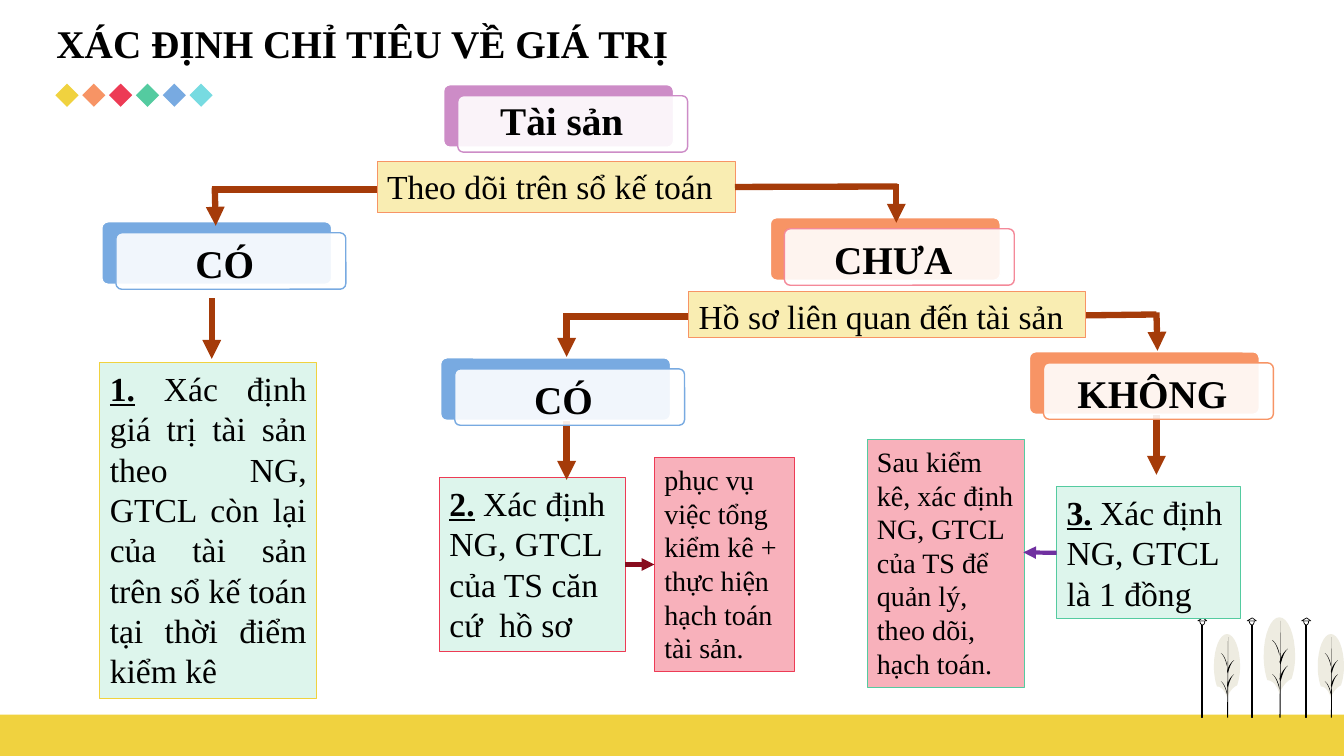
from lxml import etree
from pptx import Presentation
from pptx.dml.color import RGBColor
from pptx.enum.shapes import MSO_CONNECTOR as Connector, MSO_SHAPE as Shape
from pptx.enum.text import MSO_ANCHOR as Anchor, MSO_AUTO_SIZE as AutoSize, PP_ALIGN as Align
from pptx.oxml.ns import qn
from pptx.util import Inches, Pt

COLORS = {
    "yellow": "F0D23F", "orange": "F79465", "red": "ED3B55", "green": "54CBA0",
    "blue": "78AAE1", "cyan": "77DBE1", "purple": "CD8CC7", "pink": "F48999",
    "mint": "DDF5EC", "rose": "F8B1BB", "cream": "F9EDB2", "brown": "A53B09",
    "maroon": "880C1E", "violet": "7030A0", "leaf": "EEECE1",
    "black": "000000", "white": "FFFFFF",
}
FONT = "Times New Roman"
TITLE = "XÁC ĐỊNH CHỈ TIÊU VỀ GIÁ TRỊ"
DIAMONDS = ["yellow", "orange", "red", "green", "blue", "cyan"]

BOXES = {
    "records": ((4.36, 4.74, 1.84, 1.72), "mint", "red", 24, Align.LEFT,
                "2.", " Xác định NG, GTCL của TS căn cứ  hồ sơ"),
    "nominal": ((10.48, 4.83, 1.82, 1.31), "mint", "green", 24, Align.LEFT,
                "3.", " Xác định NG, GTCL là 1 đồng"),
    "purpose": ((6.49, 4.54, 1.39, 2.12), "rose", "red", 20, Align.LEFT,
                "", "phục vụ việc tổng kiểm kê + thực hiện hạch toán tài sản."),
    "afterwards": ((8.6, 4.36, 1.56, 2.46), "rose", "green", 20, Align.LEFT,
                   "", "Sau kiểm kê, xác định NG, GTCL của TS để quản lý, theo dõi, hạch toán."),
    "book_value": ((0.99, 3.6, 2.15, 3.33), "mint", "yellow", 24, Align.JUSTIFY,
                   "1.", " Xác định giá trị tài sản theo NG, GTCL còn lại của tài sản trên sổ kế "
                   "toán tại thời điểm kiểm kê"),
}
QUESTIONS = {
    "ledger": ((3.74, 1.6, 3.55, 0.51), "Theo dõi trên sổ kế toán"),
    "documents": ((6.83, 2.89, 3.94, 0.46), "Hồ sơ liên quan đến tài sản"),
}
CARDS = [
    ("Tài sản ", 4.4, 0.84, "purple", "purple", 0.11),
    ("CÓ", 1.01, 2.2, "blue", "blue", 0.17),
    ("CHƯA", 7.64, 2.16, "orange", "pink", 0.17),
    ("CÓ", 4.37, 3.55, "blue", "blue", 0.17),
    ("KHÔNG", 10.21, 3.49, "orange", "orange", 0.17),
]
BRANCH_LINES = [
    ((2.1, 1.88), (4.12, 1.88), False),
    ((2.1, 2.96), (2.1, 3.56), True),
    ((5.62, 3.11), (5.62, 3.54), True),
    ((5.62, 3.14), (7.65, 3.14), False),
    ((9.87, 3.14), (11.47, 3.12), False),
    ((11.47, 3.1), (11.48, 3.48), True),
    ((5.62, 4.16), (5.62, 4.76), True),
    ((11.47, 4.11), (11.47, 4.71), True),
]
CARD_ARROWS = [((2.13, 1.86), (2.14, 2.24), True), ((8.89, 1.83), (8.89, 2.21), True)]

GROUND = 7.12
TREES = [(13.2, 1), (12.69, 1.2), (12.17, 1)]
LAMPS = [12.96, 12.42, 11.93]
CROWN = [
    (0, -0.83),
    ((0.07, -0.83), (0.13, -0.69), (0.13, -0.51)),
    ((0.13, -0.44), (0.12, -0.38), (0.1, -0.32)),
    ((0.1, -0.32), (0.04, -0.3), (0, -0.2)),
    ((0, -0.2), (-0.03, -0.31), (-0.1, -0.31)),
    ((-0.12, -0.37), (-0.13, -0.44), (-0.13, -0.51)),
    ((-0.13, -0.69), (-0.07, -0.83), (0, -0.83)),
]
TRUNK = [(0.01, -0.8), (0.01, 0), (0, 0)]
LEFT_TWIG = [(-0.06, -0.36), ((-0.06, -0.36), (-0.02, -0.34), (0, -0.25)),
             (0, -0.23), ((0, -0.23), (-0.02, -0.33), (-0.06, -0.36))]
RIGHT_TWIG = [(0.07, -0.57), ((0.03, -0.54), (0.01, -0.44), (0.01, -0.44)),
              (0, -0.46), ((0.02, -0.54), (0.07, -0.57), (0.07, -0.57))]
TWIGS = [(LEFT_TWIG, 0), (LEFT_TWIG, -0.28), (RIGHT_TWIG, 0), (RIGHT_TWIG, 0.14)]
LAMP_PARTS = [
    [(-0.01, -0.97), (0, -0.97), (0, 0), (-0.01, 0)],
    [(0.02, -0.96), ((0.02, -0.94), (0.01, -0.92), (0, -0.92)),
     ((-0.02, -0.92), (-0.03, -0.94), (-0.03, -0.96))],
    [(0, -0.99), (0.04, -0.96), (-0.05, -0.96)],
]

presentation = Presentation()
presentation.slide_width, presentation.slide_height = Inches(13.33), Inches(7.5)
slide = presentation.slides.add_slide(presentation.slide_layouts[5])
shapes = slide.shapes


def color(name):
    return RGBColor.from_string(COLORS[name])


def paint(shape, fill, line=None, width=0.5):
    shape.shadow.inherit = False
    shape.fill.solid()
    shape.fill.fore_color.rgb = color(fill)
    if line:
        shape.line.color.rgb = color(line)
        shape.line.width = Pt(width)
    else:
        shape.line.fill.background()
    return shape


def add_box(kind, frame, fill, line=None, width=0.5):
    shape = shapes.add_shape(kind, *map(Inches, frame))
    if kind == Shape.ROUNDED_RECTANGLE:
        shape.adjustments[0] = 0.1
    return paint(shape, fill, line, width)


def write(shape, text, number="", size=24, bold=False, align=Align.LEFT, anchor=Anchor.TOP):
    frame = shape.text_frame
    frame.word_wrap = True
    frame.auto_size = AutoSize.NONE
    frame.vertical_anchor = anchor
    paragraph = frame.paragraphs[0]
    paragraph.alignment = align
    for content, marked in ((number, True), (text, False)):
        if content:
            run = paragraph.add_run()
            run.text = content
            run.font.name, run.font.size = FONT, Pt(size)
            run.font.bold, run.font.underline = bold or marked, marked
            run.font.color.rgb = color("black")
    return paragraph


def add_line(start, end, arrow=True, tint="brown", width=4.5):
    line = shapes.add_connector(Connector.STRAIGHT, *map(Inches, start + end))
    line.line.color.rgb = color(tint)
    line.line.width = Pt(width)
    if arrow:
        etree.SubElement(line.line._get_or_add_ln(), qn("a:tailEnd"), type="triangle")
    etree.SubElement(line._element.spPr, qn("a:effectLst"))
    return line


def flatten(outline, steps=8):
    points = [outline[0]]
    for part in outline[1:]:
        if len(part) == 2:
            points.append(part)
            continue
        curve = [points[-1], *part]
        for step in range(1, steps + 1):
            t = step / steps
            weights = ((1 - t) ** 3, 3 * t * (1 - t) ** 2, 3 * t * t * (1 - t), t ** 3)
            points.append(tuple(sum(w * p[axis] for w, p in zip(weights, curve)) for axis in (0, 1)))
    return points


def add_outline(outline, x, fill, scale=1, drop=0, line=None):
    points = [(Inches(x + scale * px), Inches(GROUND + scale * (py + drop)))
              for px, py in flatten(outline)]
    builder = shapes.build_freeform(*points[0])
    builder.add_line_segments(points[1:], close=True)
    paint(builder.convert_to_shape(), fill, line)


add_box(Shape.RECTANGLE, (0, 7.09, 13.33, 0.41), "yellow")
for x, scale in TREES:
    add_outline(CROWN, x, "leaf", scale)
    add_outline(TRUNK, x, "black", scale)
    for twig, drop in TWIGS:
        add_outline(twig, x, "black", scale, drop)
for x in LAMPS:
    for part in LAMP_PARTS:
        add_outline(part, x, "white", line="black")

title = shapes.title
title.left, title.top, title.width, title.height = map(Inches, (0.46, 0.14, 6.93, 0.57))
write(title, TITLE, size=28, bold=True)
for index, tint in enumerate(DIAMONDS):
    add_box(Shape.DIAMOND, (0.55 + 0.266 * index, 0.83, 0.23, 0.23), tint)

placed = {}
for name, (frame, fill, line, size, align, number, text) in BOXES.items():
    placed[name] = add_box(Shape.RECTANGLE, frame, fill, line)
    write(placed[name], text, number, size, align=align)
for branch in BRANCH_LINES:
    add_line(*branch)
for name, (frame, text) in QUESTIONS.items():
    placed[name] = add_box(Shape.RECTANGLE, frame, "cream", "orange")
    write(placed[name], text)

for text, left, top, fill, line, text_drop in CARDS:
    add_box(Shape.ROUNDED_RECTANGLE, (left, top, 2.28, 0.62), fill, "white", 1)
    front = add_box(Shape.ROUNDED_RECTANGLE, (left + 0.14, top + 0.11, 2.28, 0.56), "white", line, 1)
    tone = front._element.spPr.find(qn("a:solidFill"))[0]
    etree.SubElement(tone, qn("a:alpha"), val="90000")
    label = shapes.add_textbox(*map(Inches, (left + 0.12, top + text_drop, 2.2, 0.53)))
    label.text_frame.margin_top = label.text_frame.margin_bottom = 0
    paragraph = write(label, text, size=28, bold=True, align=Align.CENTER, anchor=Anchor.MIDDLE)
    paragraph.line_spacing = 0.9

for arrow in CARD_ARROWS:
    add_line(*arrow)
add_line((7.29, 1.86), (8.9, 1.85), False).begin_connect(placed["ledger"], 3)
purpose_arrow = add_line((6.2, 5.6), (6.49, 5.6), tint="maroon", width=3)
purpose_arrow.begin_connect(placed["records"], 3)
purpose_arrow.end_connect(placed["purpose"], 1)
add_line((10.48, 5.48), (10.15, 5.48), tint="violet", width=3).begin_connect(placed["nominal"], 1)

presentation.save("out.pptx")
